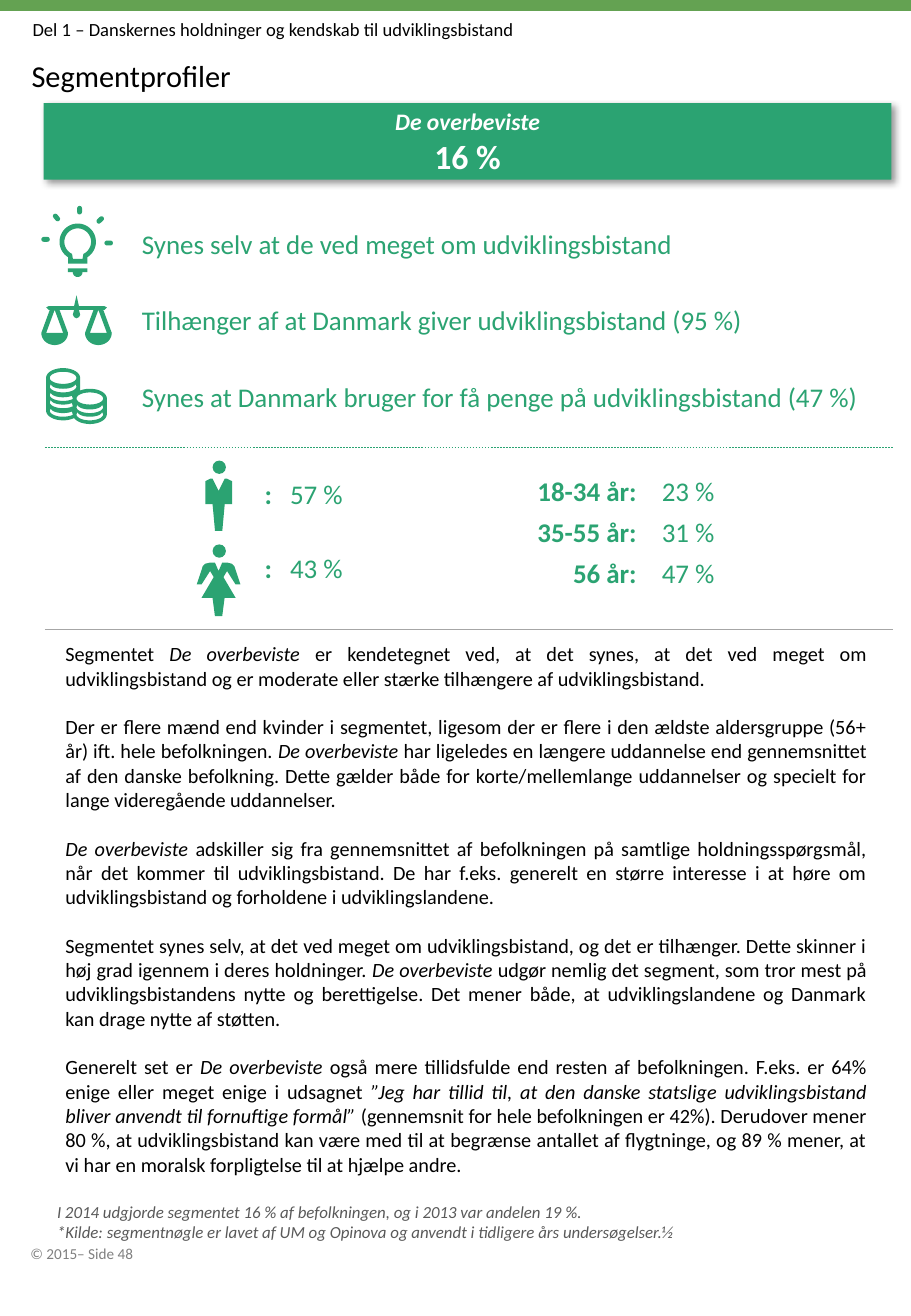
import math

import pptx
import pptx.dml.color
import pptx.enum.dml
import pptx.enum.shapes
import pptx.enum.text
import pptx.util
from lxml import etree
from pptx.oxml.ns import qn
from pptx.util import Inches

COLORS = {"bar": "64A252", "green": "2BA372", "black": "000000", "white": "FFFFFF",
          "note": "595959", "copyright": "808080", "rule": "A6A6A6"}
ALIGN = pptx.enum.text.PP_ALIGN
ANCHOR = pptx.enum.text.MSO_ANCHOR
SHAPE = pptx.enum.shapes.MSO_SHAPE

STATEMENTS = [
    "Synes selv at de ved meget om udviklingsbistand",
    "Tilhænger af at Danmark giver udviklingsbistand (95 %)",
    "Synes at Danmark bruger for få penge på udviklingsbistand (47 %)",
]
AGES = [("18-34 år:", "23 %"), ("35-55 år:", "31 %"), ("56 år:", "47 %")]
PROFILE = [
    "Segmentet _De overbeviste _er kendetegnet ved, at det synes, at det ved meget om "
    "udviklingsbistand og er moderate eller stærke tilhængere af udviklingsbistand.",
    "Der er flere mænd end kvinder i segmentet, ligesom der er flere i den ældste aldersgruppe "
    "(56+ år) ift. hele befolkningen. _De overbeviste _har ligeledes en længere uddannelse end "
    "gennemsnittet af den danske befolkning. Dette gælder både for korte/mellemlange "
    "uddannelser og specielt for lange videregående uddannelser.",
    "_De overbeviste _adskiller sig fra gennemsnittet af befolkningen på samtlige "
    "holdningsspørgsmål, når det kommer til udviklingsbistand. De har f.eks. generelt en større "
    "interesse i at høre om udviklingsbistand og forholdene i udviklingslandene.",
    "Segmentet synes selv, at det ved meget om udviklingsbistand, og det er tilhænger. Dette "
    "skinner i høj grad igennem i deres holdninger. _De overbeviste_ udgør nemlig det segment, "
    "som tror mest på udviklingsbistandens nytte og berettigelse. Det mener både, at "
    "udviklingslandene og Danmark kan drage nytte af støtten.",
    "Generelt set er _De overbeviste _også mere tillidsfulde end resten af befolkningen. F.eks. "
    "er 64% enige eller meget enige i udsagnet _”Jeg har tillid til, at den danske statslige "
    "udviklingsbistand bliver anvendt til fornuftige formål”_ (gennemsnit for hele befolkningen "
    "er 42%). Derudover mener 80 %, at udviklingsbistand kan være med til at begrænse antallet "
    "af flygtninge, og 89 % mener, at vi har en moralsk forpligtelse til at hjælpe andre.",
]
NOTES = [
    "I 2014 udgjorde segmentet 16 % af befolkningen, og i 2013 var andelen 19 %.",
    "*Kilde: segmentnøgle er lavet af UM og Opinova og anvendt i tidligere års undersøgelser.½",
]


def rgb(name):
    return pptx.dml.color.RGBColor.from_string(COLORS[name])


def write_text(paragraph, text, size=16, color="green", bold=False, italic=False,
               align=ALIGN.LEFT, before=0, tab=None):
    """Write one paragraph; underscores toggle italic, and a tab stop is given in inches."""
    paragraph.alignment = align
    paragraph.space_before = pptx.util.Pt(before)
    if tab:
        tabs = etree.SubElement(paragraph._p.get_or_add_pPr(), qn("a:tabLst"))
        etree.SubElement(tabs, qn("a:tab"), pos=str(Inches(tab)), algn="l")
    for index, part in enumerate(text.split("_")):
        if part:
            run = paragraph.add_run()
            run.text = part
            run.font.name = "Calibri"
            run.font.size = pptx.util.Pt(size)
            run.font.color.rgb = rgb(color)
            run.font.bold = bold
            run.font.italic = italic or index % 2 == 1


def set_frame(frame, anchor=ANCHOR.TOP, inset=(0.1, 0.05)):
    frame.word_wrap = True
    frame.auto_size = pptx.enum.text.MSO_AUTO_SIZE.NONE
    frame.vertical_anchor = anchor
    frame.margin_left = frame.margin_right = Inches(inset[0])
    frame.margin_top = frame.margin_bottom = Inches(inset[1])


def add_text(shapes, box, texts, anchor=ANCHOR.TOP, inset=(0.1, 0.05), gap=0, **text_format):
    frame = shapes.add_textbox(*map(Inches, box)).text_frame
    set_frame(frame, anchor, inset)
    for index, text in enumerate(texts):
        paragraph = frame.add_paragraph() if index else frame.paragraphs[0]
        write_text(paragraph, text, before=gap if index else 0, **text_format)
    return frame


def paint(shape, color):
    shape.shadow.inherit = False
    shape.fill.solid()
    shape.fill.fore_color.rgb = rgb(color)
    shape.line.fill.background()
    return shape


def add_shape(shapes, kind, box, color="green"):
    return paint(shapes.add_shape(kind, *map(Inches, box)), color)


def add_outline(shapes, *contours):
    """Draw closed contours as one green shape; inner contours become holes."""
    builder = None
    for contour in contours:
        points = [(Inches(x), Inches(y)) for x, y in contour]
        if builder is None:
            builder = shapes.build_freeform(*points[0], scale=1.0)
        else:
            builder.move_to(*points[0])
        builder.add_line_segments(points[1:], close=True)
    paint(builder.convert_to_shape(), "green")


def arc(x, y, radius_x, radius_y, start, end, steps=24):
    """Points on an ellipse, with angles in degrees clockwise from the right."""
    angles = [math.radians(start + (end - start) * i / steps) for i in range(steps + 1)]
    return [(x + radius_x * math.cos(a), y + radius_y * math.sin(a)) for a in angles]


def mirror(points, axis):
    return [(2 * axis - x, y) for x, y in reversed(points)]


def symmetric(half, axis):
    return half + mirror(half, axis)


def add_line(shapes, y, color, dash=None):
    line = shapes.add_connector(pptx.enum.shapes.MSO_CONNECTOR.STRAIGHT,
                                Inches(0.37), Inches(y), Inches(7.35), Inches(y))
    line.line.color.rgb = rgb(color)
    line.line.width = pptx.util.Pt(0.25)
    line.line.dash_style = dash
    etree.SubElement(line._element.spPr, qn("a:effectLst"))


def add_banner(shapes):
    banner = add_shape(shapes, SHAPE.RECTANGLE, (0.36, 0.85, 6.98, 0.63))
    effects = banner._element.spPr.find(qn("a:effectLst"))
    shadow = etree.SubElement(effects, qn("a:outerShdw"), blurRad=str(pptx.util.Pt(4)),
                              dist=str(pptx.util.Pt(3)), dir="2700000", algn="tl", rotWithShape="0")
    color = etree.SubElement(shadow, qn("a:srgbClr"), val=COLORS["black"])
    etree.SubElement(color, qn("a:alpha"), val="40000")
    frame = banner.text_frame
    set_frame(frame, ANCHOR.MIDDLE)
    style = {"color": "white", "bold": True, "align": ALIGN.CENTER}
    write_text(frame.paragraphs[0], "De overbeviste", size=14, italic=True, **style)
    write_text(frame.add_paragraph(), "16 %", size=20, **style)


def add_bulb(shapes):
    glass = arc(0.64, 1.99, 0.15, 0.15, 270, 122) + [(0.56, 2.17)]
    hollow = arc(0.64, 1.99, 0.11, 0.11, 270, 115) + [(0.6, 2.13)]
    base = [(0.56, 2.21), (0.56, 2.24), (0.6, 2.24)] + arc(0.64, 2.24, 0.04, 0.04, 180, 90)
    add_outline(shapes, symmetric(glass, 0.64), symmetric(hollow, 0.64))
    add_outline(shapes, symmetric(base, 0.64))
    for x, y, angle in [(0.38, 1.97, 0), (0.47, 1.79, 50), (0.66, 1.73, 90),
                        (0.83, 1.81, -43), (0.9, 2, 0)]:
        ray = add_shape(shapes, SHAPE.ROUNDED_RECTANGLE, (x - 0.04, y - 0.02, 0.07, 0.04))
        ray.adjustments[0] = 0.5
        ray.rotation = angle


def add_scales(shapes):
    half = [(0.63, 2.43), (0.61, 2.52), (0.4, 2.52), (0.38, 2.53), (0.4, 2.55), (0.41, 2.55),
            (0.34, 2.74), *arc(0.45, 2.74, 0.11, 0.1, 180, 0), (0.49, 2.55), (0.61, 2.55),
            (0.6, 2.59), (0.61, 2.61), (0.63, 2.62)]
    hole = [(0.38, 2.74), (0.45, 2.55), (0.52, 2.74)]
    add_outline(shapes, symmetric(half, 0.63), hole, mirror(hole, 0.63))


def coin_edge(x, y, start):
    return arc(x, y, 0.11, 0.05, start, 180) + arc(x, y - 0.02, 0.1, 0.04, 180, start)


def add_coins(shapes):
    stacks = (arc(0.52, 3.11, 0.14, 0.08, 180, 360) + arc(0.74, 3.28, 0.14, 0.08, 235, 360)
              + arc(0.74, 3.41, 0.14, 0.08, 0, 160) + arc(0.52, 3.38, 0.14, 0.08, 50, 180))
    tops = [arc(x, y, 0.11, 0.05, 0, 360) for x, y in [(0.52, 3.11), (0.74, 3.28)]]
    edges = [coin_edge(x, y, start) for x, y, start in [
        (0.52, 3.18, 0), (0.52, 3.25, 43), (0.52, 3.31, 43), (0.52, 3.38, 43),
        (0.74, 3.35, 0), (0.74, 3.41, 0)]]
    add_outline(shapes, stacks, *tops, *edges)


def add_person(shapes, head_top, half_body):
    person = shapes.add_group_shape().shapes
    add_shape(person, SHAPE.OVAL, (1.75, head_top, 0.11, 0.11))
    add_outline(person, symmetric(half_body, 1.8))


def main():
    presentation = pptx.Presentation()
    presentation.slide_width, presentation.slide_height = Inches(7.5), Inches(10.83)
    slide = presentation.slides.add_slide(presentation.slide_layouts[5])
    shapes = slide.shapes
    wide_inset = (0.11, 0.06)

    add_shape(shapes, SHAPE.RECTANGLE, (0, 0, 7.5, 0.09), "bar")
    title = shapes.title
    title.left, title.top, title.width, title.height = map(Inches, (0.15, 0.41, 7.2, 0.36))
    set_frame(title.text_frame, inset=wide_inset)
    write_text(title.text_frame.paragraphs[0], "Segmentprofiler", size=18, color="black")
    add_text(shapes, (0.17, 0.1, 5.93, 0.29),
             ["Del 1 – Danskernes holdninger og kendskab til udviklingsbistand"],
             size=11, color="black")
    add_banner(shapes)

    for index, statement in enumerate(STATEMENTS):
        add_text(shapes, (1.07, 1.82 + 0.63 * index, 6.34, 0.37), [statement], ANCHOR.MIDDLE)
    add_bulb(shapes.add_group_shape().shapes)
    add_scales(shapes)
    add_coins(shapes)

    add_line(shapes, 3.68, "green", pptx.enum.dml.MSO_LINE.DASH)
    add_person(shapes, 3.79, [(1.8, 4.04), (1.75, 3.94), (1.73, 3.94), (1.69, 3.96),
                              (1.69, 4.15), (1.75, 4.15), (1.77, 4.37)])
    add_person(shapes, 4.48, [(1.8, 4.7), (1.77, 4.63), (1.73, 4.63), (1.69, 4.64), (1.67, 4.66),
                              (1.62, 4.81), (1.66, 4.81), (1.73, 4.7), (1.76, 4.75),
                              (1.66, 4.92), (1.75, 4.92), (1.77, 5.07)])
    for top, share in [(3.88, "57 %"), (4.49, "43 %")]:
        frame = add_text(shapes, (2.08, top, 1.27, 0.37), [":\t"], ANCHOR.MIDDLE,
                         bold=True, tab=0.21)
        write_text(frame.paragraphs[0], share)
    ages = shapes.add_group_shape().shapes
    for index, (age, share) in enumerate(AGES):
        top = 3.77 + 0.34 * index
        add_text(ages, (4.12, top, 1.22, 0.53), [age], ANCHOR.MIDDLE, bold=True, align=ALIGN.RIGHT)
        add_text(ages, (5.35, top, 1.16, 0.53), [share], ANCHOR.MIDDLE)
    add_line(shapes, 5.18, "rule")

    add_text(shapes, (0.44, 5.23, 6.8, 4.75), PROFILE, gap=14.4, size=12, color="black",
             align=ALIGN.JUSTIFY)
    add_text(shapes, (0.36, 9.83, 7.2, 0.27), NOTES, inset=wide_inset, size=10, color="note",
             italic=True)
    add_text(shapes, (0.14, 10.18, 1.19, 0.27), ["© 2015– Side 48"], inset=wide_inset, size=9,
             color="copyright")
    presentation.save("out.pptx")


if __name__ == "__main__":
    main()
